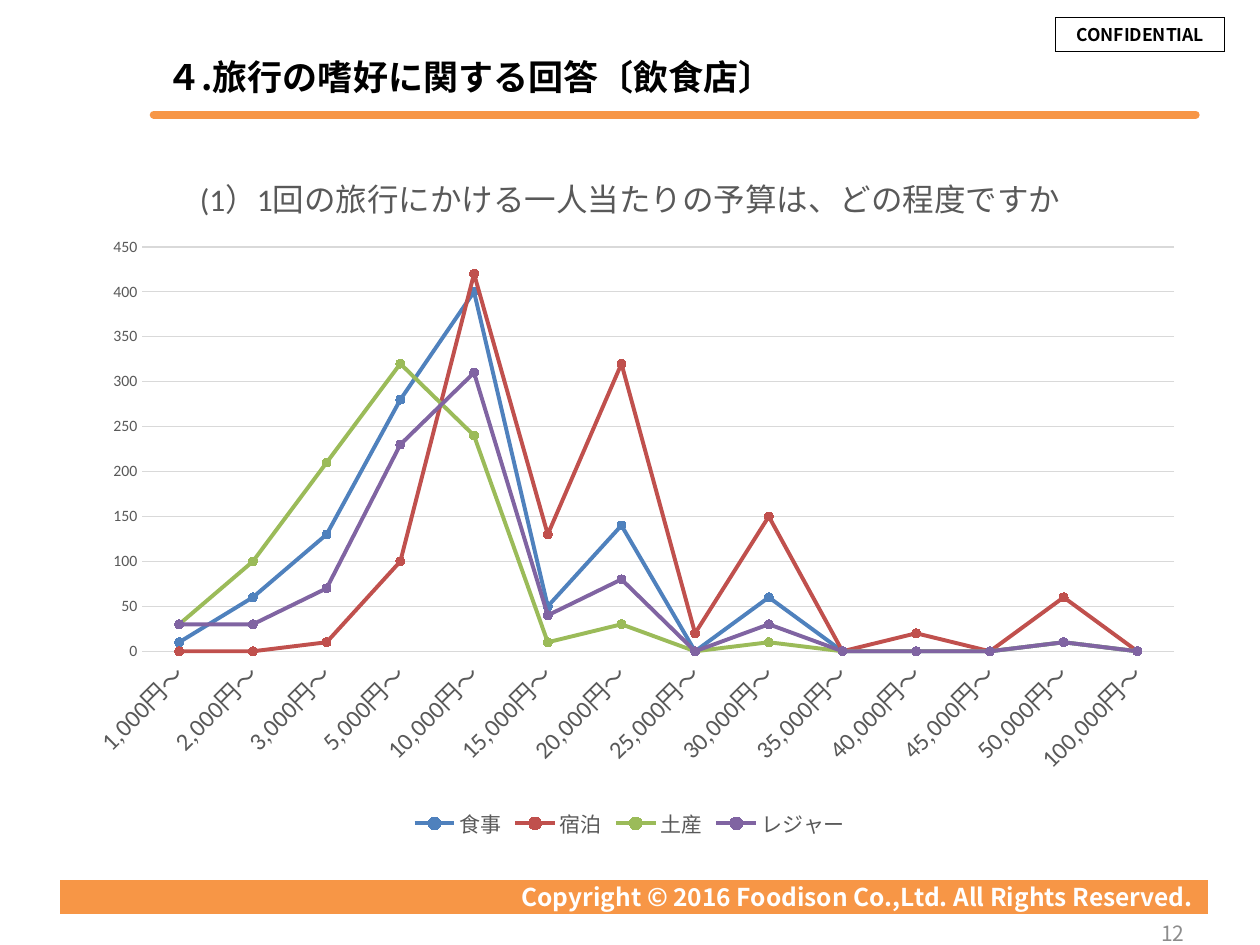
from lxml import etree
from pptx import Presentation
from pptx.chart.data import CategoryChartData
from pptx.dml.color import RGBColor
from pptx.enum.chart import XL_CHART_TYPE as ChartType, XL_LEGEND_POSITION as LegendPosition
from pptx.enum.chart import XL_MARKER_STYLE as Marker, XL_TICK_MARK as Tick
from pptx.enum.shapes import MSO_CONNECTOR as Connector, MSO_SHAPE as Shape
from pptx.enum.text import MSO_ANCHOR as Anchor, PP_ALIGN as Align
from pptx.oxml.ns import qn
from pptx.util import Pt

PX = 9144  # 100 px to the inch
ORANGE = RGBColor(0xF7, 0x96, 0x46)
WHITE = RGBColor(0xFF, 0xFF, 0xFF)
BLACK = RGBColor(0, 0, 0)
NUMBER_GRAY = RGBColor(0x8C, 0x8C, 0x8C)
TEXT_GRAY = RGBColor(0x59, 0x59, 0x59)
GRID_GRAY = RGBColor(0xD9, 0xD9, 0xD9)
BLUE = RGBColor(0x4F, 0x81, 0xBD)
RED = RGBColor(0xC0, 0x50, 0x4D)
GREEN = RGBColor(0x9B, 0xBB, 0x59)
PURPLE = RGBColor(0x80, 0x64, 0xA2)

CHART_WIDTH, CHART_HEIGHT = 900, 555
BUDGETS = [1000, 2000, 3000, 5000, 10000, 15000, 20000,
           25000, 30000, 35000, 40000, 45000, 50000, 100000]
YEN_FORMAT = '#,##0"円～"'
SPENDING = [
    ("食事", BLUE, [10, 60, 130, 280, 400, 50, 140, 0, 60, 0, 0, 0, 10, 0]),
    ("宿泊", RED, [0, 0, 10, 100, 420, 130, 320, 20, 150, 0, 20, 0, 60, 0]),
    ("土産", GREEN, [30, 100, 210, 320, 240, 10, 30, 0, 10, 0, 0, 0, 10, 0]),
    ("レジャー", PURPLE, [30, 30, 70, 230, 310, 40, 80, 0, 30, 0, 0, 0, 10, 0]),
]


def set_font(font, size, color, bold=False, name="Noto Sans CJK JP"):
    font.name, font.size, font.bold = name, Pt(size), bold
    font.color.rgb = color


def write(shape, text, size, color, align, bold=True):
    """Fill a shape with one vertically centred line of text."""
    frame = shape.text_frame
    frame.word_wrap = True
    frame.vertical_anchor = Anchor.MIDDLE
    paragraph = frame.paragraphs[0]
    paragraph.text = text
    paragraph.alignment = align
    set_font(paragraph.font, size, color, bold)


deck = Presentation()
deck.slide_width, deck.slide_height = 1000 * PX, 750 * PX
page = deck.slides.add_slide(deck.slide_layouts[5])
shapes = page.shapes

# Header
title = shapes.title
title.left, title.top, title.width, title.height = 122 * PX, 30 * PX, 828 * PX, 61 * PX
write(title, "４.旅行の嗜好に関する回答〔飲食店〕", 20, BLACK, Align.LEFT)

rule = shapes.add_connector(Connector.STRAIGHT, 122 * PX, 91 * PX, 949 * PX, 91 * PX)
rule.line.color.rgb = ORANGE
rule.line.width = Pt(4.5)
properties = rule._element.spPr
properties.find(qn("a:ln")).set("cap", "rnd")
etree.SubElement(properties, qn("a:effectLst"))

stamp = shapes.add_shape(Shape.RECTANGLE, 838 * PX, 14 * PX, 134 * PX, 27 * PX)
stamp.fill.background()
write(stamp, "CONFIDENTIAL", 10, BLACK, Align.CENTER)

# Footer
footer = shapes.add_shape(Shape.RECTANGLE, 49 * PX, 700 * PX, 908 * PX, 24 * PX)
footer.fill.solid()
footer.fill.fore_color.rgb = ORANGE
write(footer, "Copyright © 2016 Foodison Co.,Ltd. All Rights Reserved.", 14, WHITE, Align.RIGHT)

for bar, color, width in ((stamp, BLACK, 0.75), (footer, ORANGE, 2)):
    bar.shadow.inherit = False
    bar.line.color.rgb = color
    bar.line.width = Pt(width)
    outline = bar._element.spPr.find(qn("a:ln"))
    etree.SubElement(outline, qn("a:miter"), lim="800000")

page_number = shapes.add_textbox(717 * PX, 721 * PX, 233 * PX, 40 * PX)
write(page_number, "12", 12, NUMBER_GRAY, Align.RIGHT, bold=False)

# Budget chart
data = CategoryChartData(number_format="General")
data.categories = BUDGETS
data.categories.number_format = YEN_FORMAT
for name, color, counts in SPENDING:
    data.add_series(name, counts)
chart = shapes.add_chart(ChartType.LINE_MARKERS, 50 * PX, 115 * PX,
                         CHART_WIDTH * PX, CHART_HEIGHT * PX, data).chart
set_font(chart.font, 10, BLACK, name="Calibri")

chart.has_title = True
heading = chart.chart_title.text_frame.paragraphs[0]
heading.text = "(1）1回の旅行にかける一人当たりの予算は、どの程度ですか"
set_font(heading.font, 18, TEXT_GRAY, name="Calibri")
chart.chart_title.include_in_layout = False

chart.has_legend = True
chart.legend.position = LegendPosition.BOTTOM
chart.legend.include_in_layout = False
set_font(chart.legend.font, 12, TEXT_GRAY, name="Calibri")

# Plot area inside the axes, as shares of the chart
plot_area = chart._chartSpace.chart.plotArea
layout = plot_area.find(qn("c:layout"))
if layout is None:
    layout = etree.Element(qn("c:layout"))
    plot_area.insert(0, layout)
manual = etree.SubElement(layout, qn("c:manualLayout"))
for tag, value in (("layoutTarget", "inner"), ("xMode", "edge"), ("yMode", "edge"),
                   ("x", 63 / CHART_WIDTH), ("y", 81 / CHART_HEIGHT),
                   ("w", 819 / CHART_WIDTH), ("h", 321 / CHART_HEIGHT)):
    etree.SubElement(manual, qn(f"c:{tag}"), val=str(value))

budget_axis, count_axis = chart.category_axis, chart.value_axis
for axis, size in ((budget_axis, 14), (count_axis, 9)):
    axis.major_tick_mark = axis.minor_tick_mark = Tick.NONE
    set_font(axis.tick_labels.font, size, TEXT_GRAY, name="Calibri")
budget_axis.tick_labels.number_format = YEN_FORMAT
budget_axis.tick_labels.number_format_is_linked = False
count_axis.minimum_scale, count_axis.maximum_scale, count_axis.major_unit = 0, 450, 50
count_axis.format.line.fill.background()
for line in (budget_axis.format.line, count_axis.major_gridlines.format.line):
    line.color.rgb = GRID_GRAY
    line.width = Pt(0.75)

for series, (name, color, counts) in zip(chart.plots[0].series, SPENDING):
    series.smooth = False
    series.format.line.color.rgb = color
    series.format.line.width = Pt(2.25)
    marker = series.marker
    marker.style, marker.size = Marker.CIRCLE, 5
    marker.format.fill.solid()
    marker.format.fill.fore_color.rgb = color
    marker.format.line.color.rgb = color

deck.save("out.pptx")
